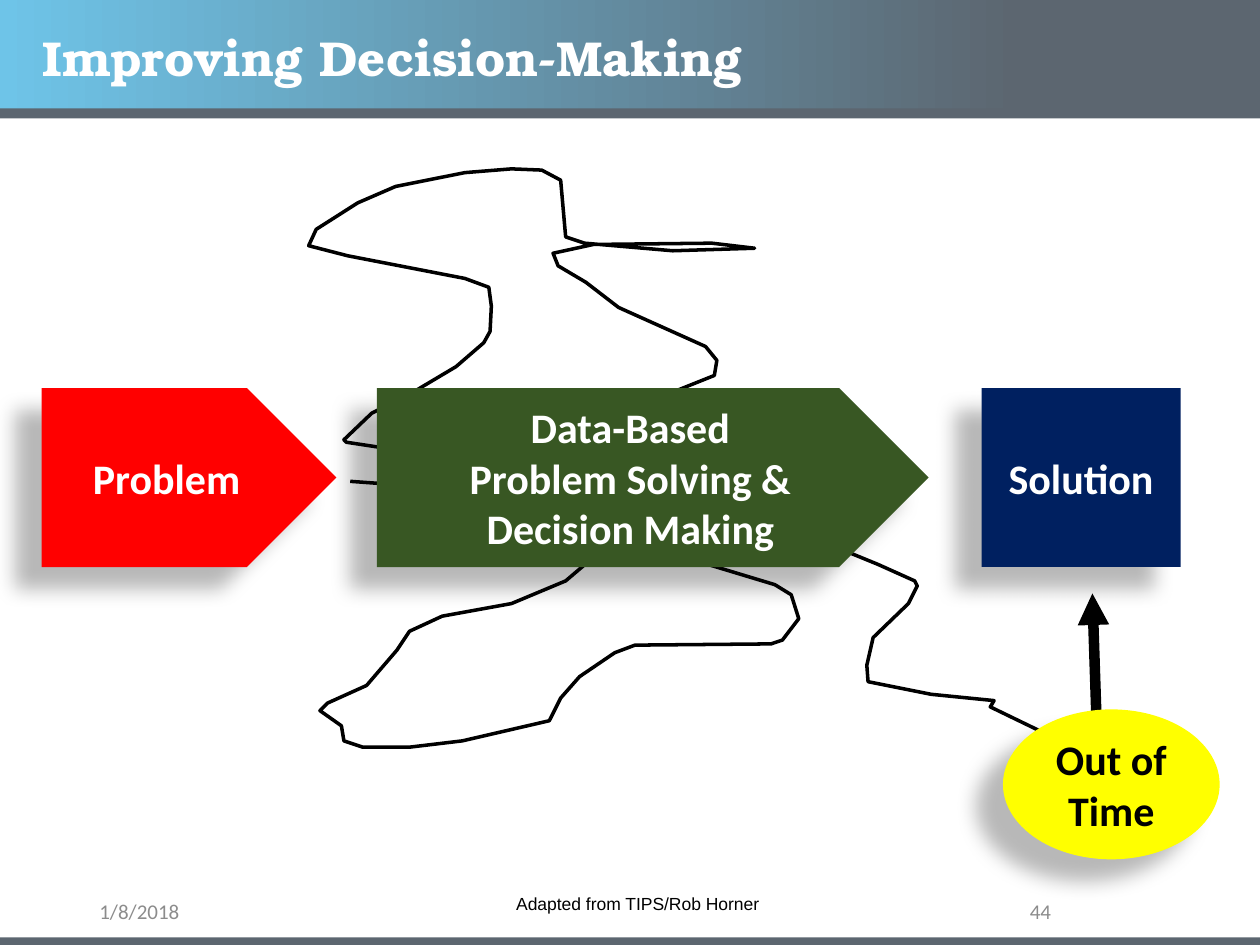
from dataclasses import dataclass

import pptx
import pptx.dml.color
import pptx.enum.shapes
import pptx.enum.text
import pptx.oxml
import pptx.oxml.ns
import pptx.util
from pptx.util import Inches

SHAPE = pptx.enum.shapes.MSO_SHAPE
ALIGN = pptx.enum.text.PP_ALIGN
ANCHOR = pptx.enum.text.MSO_ANCHOR
NAMESPACE = pptx.oxml.ns.nsdecls("a")


@dataclass(frozen=True)
class Theme:
    sky: str = "6EC4E8"
    slate: str = "5C6670"
    white: str = "FFFFFF"
    black: str = "000000"
    grey: str = "8C8C8C"
    red: str = "FF0000"
    green: str = "385723"
    navy: str = "002060"
    yellow: str = "FFFF00"
    title_font: str = "TeX Gyre Bonum"
    body_font: str = "Calibri"
    credit_font: str = "Arial"
    title_size: int = 28
    step_size: int = 24
    footer_size: int = 12
    credit_size: int = 10


THEME = Theme()

WANDERING_ROUTE = [
    (2.78, 3.82), (3.75, 3.89), (3.76, 4.25), (4.82, 4.33), (4.49, 4.61),
    (4.06, 4.79), (3.51, 4.89), (3.25, 5.01), (3.15, 5.16), (2.91, 5.44),
    (2.60, 5.58), (2.54, 5.64), (2.71, 5.76), (2.73, 5.88), (2.88, 5.93),
    (3.25, 5.93), (3.67, 5.88), (4.36, 5.72), (4.45, 5.54), (4.60, 5.37),
    (4.88, 5.18), (5.04, 5.12), (6.12, 5.11), (6.21, 5.08), (6.34, 4.91),
    (6.28, 4.72), (6.15, 4.64), (5.62, 4.48), (5.71, 3.96), (2.75, 3.51),
    (2.73, 3.49), (2.95, 3.28), (3.30, 3.10), (3.62, 2.91), (3.84, 2.72),
    (3.89, 2.63), (3.90, 2.43), (3.88, 2.28), (3.69, 2.21), (2.76, 2.03),
    (2.45, 1.95), (2.51, 1.82), (2.84, 1.61), (3.14, 1.48), (3.69, 1.37),
    (4.06, 1.34), (4.30, 1.35), (4.45, 1.43), (4.49, 1.88), (4.64, 1.93),
    (5.34, 1.99), (5.99, 1.97), (5.65, 1.93), (4.71, 1.94), (4.39, 2.01),
    (4.43, 2.11), (4.65, 2.24), (4.91, 2.44), (5.60, 2.75), (5.69, 2.86),
    (5.67, 2.98), (4.97, 3.26), (4.51, 3.38), (5.82, 3.64), (6.47, 3.83),
    (6.58, 4.32), (6.97, 4.48), (7.26, 4.61), (7.28, 4.65), (7.21, 4.79),
    (6.93, 5.06), (6.88, 5.28), (6.89, 5.41), (7.39, 5.51), (7.89, 5.56),
    (7.86, 5.61), (8.17, 5.76), (8.58, 5.96), (9.02, 6.13),
]


def rgb(color):
    return pptx.dml.color.RGBColor.from_string(color)


def style_text(frame, text, font, size, color, align, bold=False, anchor=ANCHOR.MIDDLE):
    frame.word_wrap = True
    frame.vertical_anchor = anchor
    frame.text = text
    paragraph = frame.paragraphs[0]
    paragraph.alignment = align
    paragraph.font.name = font
    paragraph.font.size = pptx.util.Pt(size)
    paragraph.font.bold = bold
    paragraph.font.color.rgb = rgb(color)


def add_filled(slide, kind, left, top, width, height, color):
    filled = slide.shapes.add_shape(kind, left, top, width, height)
    filled.shadow.inherit = False
    filled.fill.solid()
    filled.fill.fore_color.rgb = rgb(color)
    filled.line.fill.background()
    return filled


def add_band(slide, left, top, width, height):
    return add_filled(slide, SHAPE.RECTANGLE, left, top, width, height, THEME.slate)


def add_header(slide, left, top, width, height):
    banner = add_band(slide, left, top, width, height)
    banner.fill.gradient()
    banner.fill.gradient_angle = 0
    for stop, color, position in zip(
            banner.fill.gradient_stops, (THEME.sky, THEME.slate), (0, 0.81)):
        stop.color.rgb = rgb(color)
        stop.position = position
    add_band(slide, left, top + height - Inches(0.01), width, Inches(0.08))

    title = slide.shapes.title
    title.left, title.top = left + Inches(0.24), top + Inches(0.17)
    title.width, title.height = Inches(9.34), Inches(0.73)
    style_text(title.text_frame, "Improving Decision-Making", THEME.title_font,
               THEME.title_size, THEME.white, ALIGN.LEFT, True, ANCHOR.TOP)
    slide.shapes._spTree.append(title._element)


def add_caption(slide, left, top, width, height, text, font, size, color, align, anchor):
    caption = slide.shapes.add_textbox(left, top, width, height)
    style_text(caption.text_frame, text, font, size, color, align, anchor=anchor)


def add_footer(slide, left, top, width):
    add_band(slide, left, top + Inches(0.4), width, Inches(0.08))
    for offset, span, text, align in ((0.69, 2.25, "1/8/2018", ALIGN.LEFT),
                                      (7.06, 1.38, "44", ALIGN.RIGHT)):
        add_caption(slide, left + Inches(offset), top + Inches(0.08), Inches(span),
                    Inches(0.23), text, THEME.body_font, THEME.footer_size,
                    THEME.grey, align, ANCHOR.MIDDLE)
    add_caption(slide, left + Inches(0.24), top, Inches(9.64), Inches(0.27),
                "Adapted from TIPS/Rob Horner", THEME.credit_font, THEME.credit_size,
                THEME.black, ALIGN.CENTER, ANCHOR.TOP)


def add_step(slide, kind, left, top, width, height, text, fill, color=THEME.white):
    step = add_filled(slide, kind, left, top, width, height, fill)
    blur, distance = pptx.util.Pt(11.8), pptx.util.Pt(19.7)
    effects = step._element.spPr.find(pptx.oxml.ns.qn("a:effectLst"))
    effects.append(pptx.oxml.parse_xml(
        f'<a:outerShdw {NAMESPACE} blurRad="{blur}" dist="{distance}" dir="8460000">'
        f'<a:srgbClr val="{THEME.black}"><a:alpha val="28000"/></a:srgbClr></a:outerShdw>'))
    style_text(step.text_frame, text, THEME.body_font, THEME.step_size, color,
               ALIGN.CENTER, True)


def add_rescue_arrow(slide, left, top, width, height):
    arrow = slide.shapes.add_connector(pptx.enum.shapes.MSO_CONNECTOR.STRAIGHT,
                                       left + width, top + height, left, top)
    arrow.line.color.rgb = rgb(THEME.black)
    arrow.line.width = pptx.util.Pt(6)
    arrow.line._get_or_add_ln().append(
        pptx.oxml.parse_xml(f'<a:tailEnd {NAMESPACE} type="triangle"/>'))
    arrow._element.spPr.append(pptx.oxml.parse_xml(f"<a:effectLst {NAMESPACE}/>"))


def add_wandering_route(slide, left, top):
    first_left = min(x for x, _ in WANDERING_ROUTE)
    first_top = min(y for _, y in WANDERING_ROUTE)
    points = [(left + Inches(x - first_left), top + Inches(y - first_top))
              for x, y in WANDERING_ROUTE]
    builder = slide.shapes.build_freeform(*points[0])
    builder.add_line_segments(points[1:], close=False)
    route = builder.convert_to_shape()
    route.shadow.inherit = False
    route.fill.background()
    route.line.color.rgb = rgb(THEME.black)
    route.line.width = pptx.util.Pt(2)


def add_journey(slide, left, top):
    row, height = top + Inches(1.74), Inches(1.42)
    add_rescue_arrow(slide, left + Inches(8.34), top + Inches(3.37),
                     Inches(0.04), Inches(1.23))
    add_step(slide, SHAPE.RECTANGLE, left + Inches(7.46), row, Inches(1.58), height,
             "Solution", THEME.navy)
    add_step(slide, SHAPE.PENTAGON, left, row, Inches(2.34), height,
             "Problem", THEME.red)
    add_wandering_route(slide, left + Inches(2.12), top)
    add_step(slide, SHAPE.OVAL, left + Inches(7.63), top + Inches(4.29),
             Inches(1.72), Inches(1.19), "Out of Time", THEME.yellow, THEME.black)
    add_step(slide, SHAPE.PENTAGON, left + Inches(2.66), row, Inches(4.38), height,
             "Data-Based\vProblem Solving &\vDecision Making", THEME.green)


def main():
    deck = pptx.Presentation()
    deck.slide_width, deck.slide_height = Inches(10), Inches(7.5)
    slide = deck.slides.add_slide(deck.slide_layouts[5])
    add_header(slide, 0, 0, deck.slide_width, Inches(0.87))
    add_footer(slide, 0, Inches(7.04), deck.slide_width)
    add_journey(slide, Inches(0.33), Inches(1.34))
    deck.save("out.pptx")


if __name__ == "__main__":
    main()
